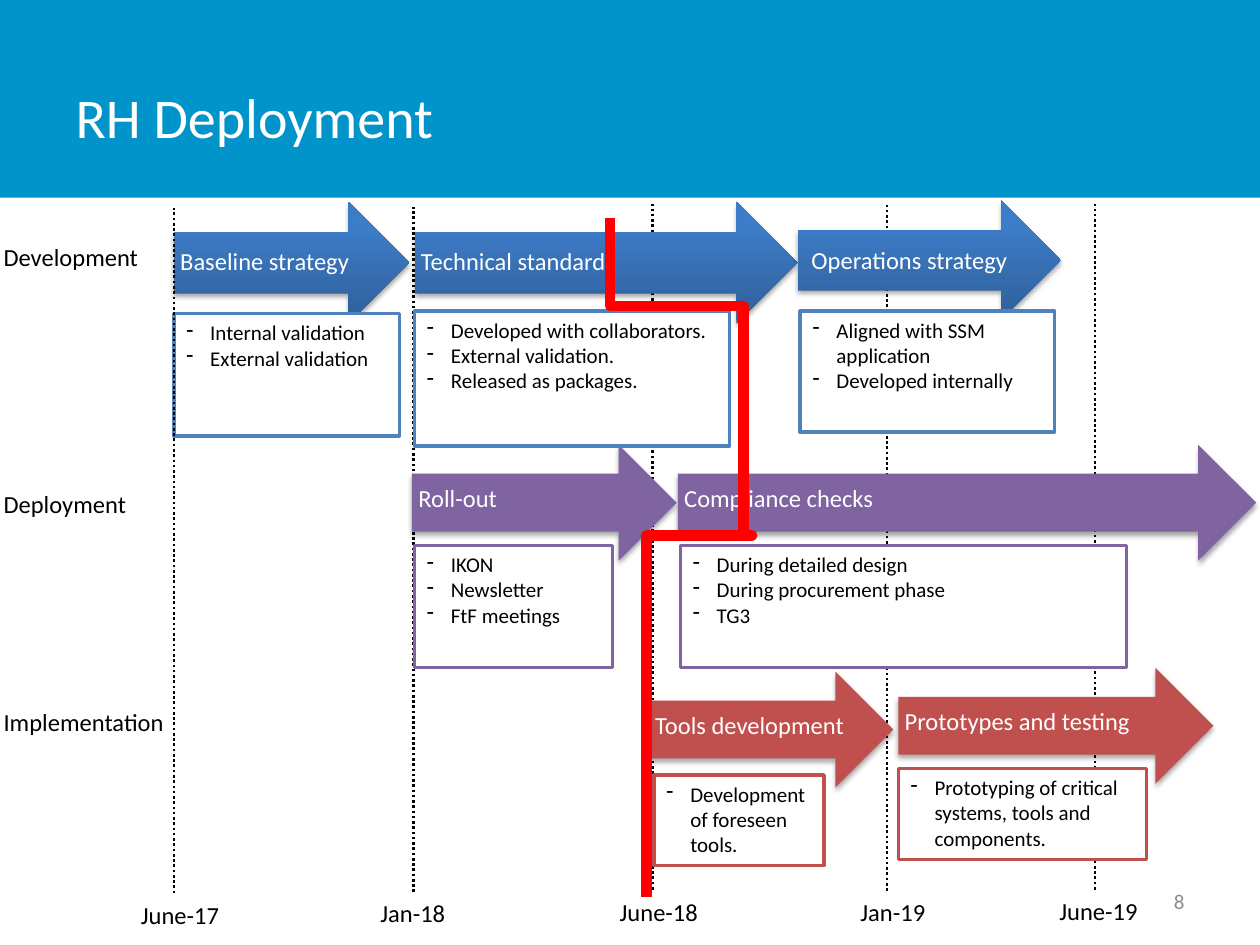
"""Build the RH Deployment roadmap slide."""
from dataclasses import dataclass

from lxml import etree
from pptx import Presentation
from pptx.dml.color import RGBColor
from pptx.enum.dml import MSO_LINE
from pptx.enum.shapes import MSO_CONNECTOR, MSO_SHAPE
from pptx.enum.text import MSO_ANCHOR, MSO_AUTO_SIZE, PP_ALIGN
from pptx.oxml import parse_xml
from pptx.oxml.ns import nsdecls, qn
from pptx.util import Pt

PX = 9144
RECT, ARROW = MSO_SHAPE.RECTANGLE, MSO_SHAPE.RIGHT_ARROW
STRAIGHT = MSO_CONNECTOR.STRAIGHT
DOTS = MSO_LINE.ROUND_DOT
MIDDLE, TOP = MSO_ANCHOR.MIDDLE, MSO_ANCHOR.TOP
LEFT, RIGHT = PP_ALIGN.LEFT, PP_ALIGN.RIGHT
FIT = MSO_AUTO_SIZE.SHAPE_TO_FIT_TEXT


@dataclass(frozen=True)
class Theme:
    """Colours, font and type sizes."""
    font: str = "Calibri"
    band: str = "0094CA"
    white: str = "FFFFFF"
    black: str = "000000"
    gray: str = "8C8C8C"
    blue: str = "4F81BD"
    violet: str = "8064A2"
    brick: str = "C0504D"
    red: str = "FF0000"
    blend: tuple = ((0, "2F5F99"), (80, "3D7CC7"), (100, "3A7CCB"))
    title: int = 32
    label: int = 14
    note: int = 12


def emu(*vals):
    """Turn px into EMU."""
    return [v * PX for v in vals]


def rgb(code):
    """Turn a hex code into a colour."""
    return RGBColor.from_string(code)


class Board:
    """Holds the theme and the slide, and draws each kind of element."""

    def __init__(self, deck, theme):
        self.theme = theme
        self.slide = deck.slides.add_slide(deck.slide_layouts[5])
        self.shapes = self.slide.shapes

    def words(self, para, text, size, color):
        """Add one styled run to a paragraph."""
        run = para.add_run()
        run.text = text
        run.font.name = self.theme.font
        run.font.size = Pt(size)
        run.font.color.rgb = rgb(color)

    def block(self, home, kind, at, fill, edge=None):
        """Add a flat preset shape."""
        shape = home.add_shape(kind, *emu(*at))
        shape.shadow.inherit = False
        shape.fill.solid()
        shape.fill.fore_color.rgb = rgb(fill)
        if edge:
            shape.line.color.rgb = rgb(edge)
            shape.line.width = Pt(2)
        else:
            shape.line.fill.background()
        return shape

    def title(self, text, at):
        """Place the title placeholder above what is drawn so far."""
        shape = self.shapes.title
        shape.left, shape.top, shape.width, shape.height = emu(*at)
        tree = shape.element.getparent()
        tree.append(shape.element)
        frame = shape.text_frame
        frame.vertical_anchor = MIDDLE
        frame.paragraphs[0].alignment = LEFT
        self.words(frame.paragraphs[0], text, self.theme.title, self.theme.white)

    def label(self, text, at):
        """Add a one-line label that fits its text."""
        frame = self.shapes.add_textbox(*emu(*at)).text_frame
        frame.word_wrap = False
        frame.auto_size = FIT
        self.words(frame.paragraphs[0], text, self.theme.label, self.theme.black)

    def number(self, text, at):
        """Add the page number."""
        frame = self.shapes.add_textbox(*emu(*at)).text_frame
        frame.word_wrap = True
        frame.vertical_anchor = MIDDLE
        frame.paragraphs[0].alignment = RIGHT
        self.words(frame.paragraphs[0], text, self.theme.note, self.theme.gray)

    def mark(self, x, top, end):
        """Add a dotted date line."""
        line = self.shapes.add_connector(STRAIGHT, *emu(x, end, x, top))
        line.line.color.rgb = rgb(self.theme.black)
        line.line.width = Pt(1.5)
        line.line.dash_style = DOTS
        etree.SubElement(line.element.spPr, qn("a:effectLst"))

    def shade(self, shape):
        """Give a shape the blue blend."""
        stops = "".join(
            f'<a:gs pos="{pos * 1000}"><a:srgbClr val="{code}"/></a:gs>'
            for pos, code in self.theme.blend)
        props = shape.element.spPr
        props.replace(props.find(qn("a:solidFill")), parse_xml(
            f'<a:gradFill {nsdecls("a")} rotWithShape="1"><a:gsLst>{stops}</a:gsLst>'
            '<a:lin ang="16200000" scaled="0"/></a:gradFill>'))

    def arrow(self, text, at, color, shift, width):
        """Add a phase arrow grouped with its caption."""
        group = self.shapes.add_group_shape().shapes
        shape = self.block(group, ARROW, at, color)
        if color == self.theme.blue:
            self.shade(shape)
        shape.element.spPr.find(qn("a:effectLst")).append(parse_xml(
            f'<a:outerShdw {nsdecls("a")} blurRad="39370" dist="22860" dir="5400000" '
            f'rotWithShape="0"><a:srgbClr val="{self.theme.black}">'
            '<a:alpha val="35000"/></a:srgbClr></a:outerShdw>'))
        dx, dy = shift
        frame = group.add_textbox(*emu(at[0] + dx, at[1] + dy, width, 58)).text_frame
        frame.word_wrap = True
        frame.vertical_anchor = MIDDLE
        frame.margin_left, frame.margin_top = emu(5, 5)
        frame.margin_right, frame.margin_bottom = emu(28, 18)
        para = frame.paragraphs[0]
        para.line_spacing = 0.9
        para.space_after = Pt(5)
        self.words(para, text, self.theme.label, self.theme.white)

    def notes(self, items, at, color):
        """Add an outlined box with a dashed list."""
        frame = self.block(self.shapes, RECT, at, self.theme.white, color).text_frame
        frame.word_wrap = True
        frame.vertical_anchor = TOP
        for i, item in enumerate(items):
            para = frame.add_paragraph() if i else frame.paragraphs[0]
            para.alignment = LEFT
            props = para._p.get_or_add_pPr()
            props.set("marL", str(19 * PX))
            props.set("indent", str(-19 * PX))
            etree.SubElement(props, qn("a:buFontTx"))
            etree.SubElement(props, qn("a:buChar")).set("char", "-")
            self.words(para, item, self.theme.note, self.theme.black)

    def trace(self, start, *points):
        """Add the open status line."""
        form = self.shapes.build_freeform(*start, scale=PX)
        form.add_line_segments(points, close=False)
        shape = form.convert_to_shape()
        shape.shadow.inherit = False
        shape.fill.background()
        shape.line.color.rgb = rgb(self.theme.red)
        shape.line.width = Pt(6)


def main():
    """Draw the slide and save it."""
    deck = Presentation()
    deck.slide_width, deck.slide_height = emu(1000, 750)
    theme = Theme()
    board = Board(deck, theme)
    blue, violet, brick = theme.blue, theme.violet, theme.brick

    board.block(board.shapes, RECT, (0, 0, 1000, 157), theme.band)
    for x, top in ((328, 164), (518, 162), (704, 163), (869, 162)):
        board.mark(x, top, top + 544)
    board.title("RH Deployment", (50, 30, 781, 125))
    board.number("8", (717, 695, 233, 40))

    for row in (
        ("Baseline strategy", (138, 160, 187, 97), blue, (0, 26), 172),
        ("Technical standards", (329, 160, 304, 97), blue, (0, 26), 292),
        ("Operations strategy", (633, 159, 209, 95), blue, (6, 26), 271),
        ("Roll-out", (327, 353, 210, 92), violet, (0, 21), 219),
        ("Compliance checks", (538, 353, 459, 92), violet, (0, 21), 401),
        ("Prototypes and testing", (713, 530, 250, 92), brick, (0, 21), 220),
        ("Tools development", (515, 533, 194, 92), brick, (0, 21), 261),
    ):
        board.arrow(*row)

    for row in (
        (("Internal validation", "External validation"), (138, 249, 179, 97), blue),
        (("Developed with collaborators.", "External validation.",
          "Released as packages."), (329, 247, 250, 107), blue),
        (("Aligned with SSM application", "Developed internally"),
         (635, 247, 202, 96), blue),
        (("IKON", "Newsletter", "FtF meetings"), (329, 433, 157, 97), violet),
        (("During detailed design", "During procurement phase", "TG3"),
         (540, 433, 354, 97), violet),
        (("Prototyping of critical systems, tools and components.",),
         (713, 610, 197, 72), brick),
        (("Development of foreseen tools.",), (519, 615, 135, 72), brick),
    ):
        board.notes(*row)

    board.mark(138, 165, 709)
    for text, x, y, width in (
        ("Development", -7, 187, 128), ("Deployment", -7, 383, 118),
        ("Implementation", -7, 556, 149), ("June-17", 102, 709, 83),
        ("Jan-18", 292, 708, 72), ("June-18", 482, 707, 83),
        ("Jan-19", 673, 707, 72), ("June-19", 831, 706, 83),
    ):
        board.label(text, (x, y, width, 34))

    board.trace((484, 173), (484, 243), (590, 243), (590, 425), (597, 425),
                (513, 425), (513, 459), (513, 712))
    deck.save("out.pptx")


if __name__ == "__main__":
    main()
